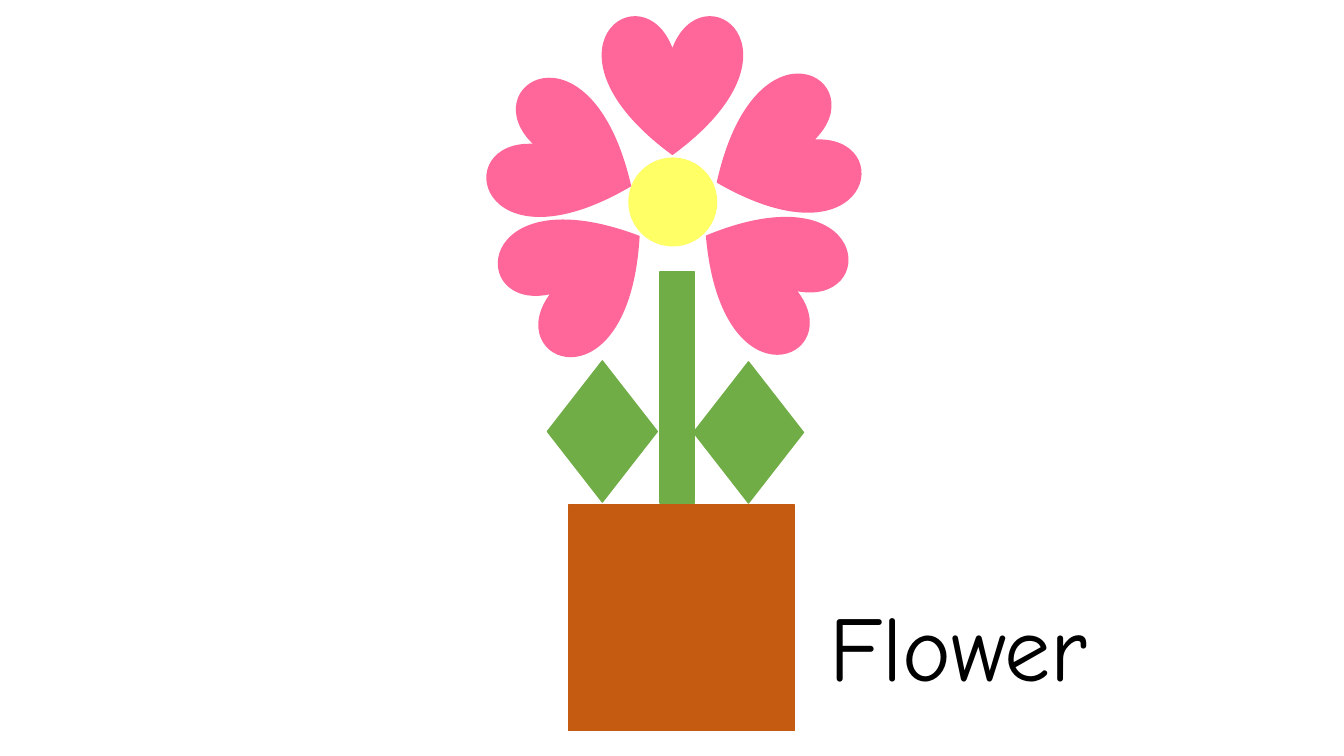
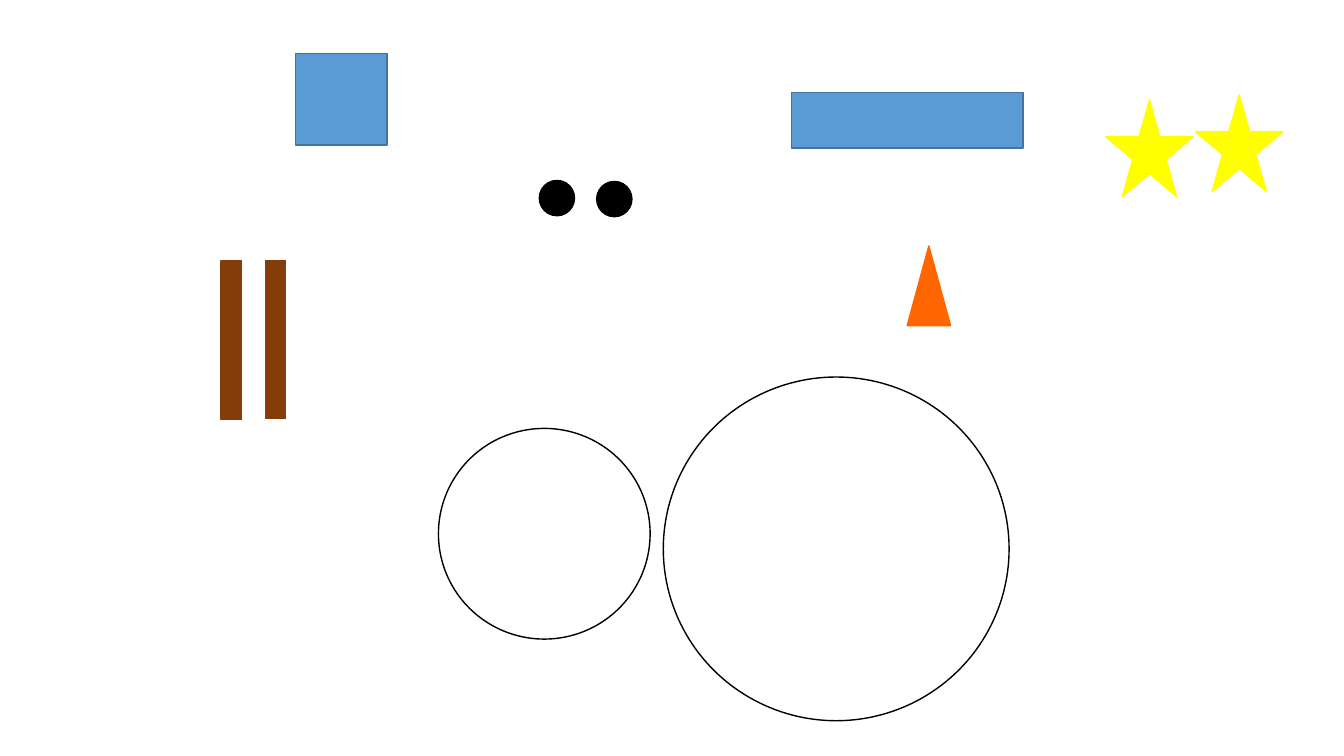
from dataclasses import dataclass

from pptx import Presentation
from pptx.dml.color import RGBColor
from pptx.enum.shapes import MSO_SHAPE
from pptx.enum.text import MSO_AUTO_SIZE
from pptx.shapes.shapetree import GroupShapes, SlideShapes
from pptx.slide import Slide
from pptx.util import Pt

OVAL = MSO_SHAPE.OVAL
HEART = MSO_SHAPE.HEART
RECTANGLE = MSO_SHAPE.RECTANGLE
DIAMOND = MSO_SHAPE.DIAMOND
STAR = MSO_SHAPE.STAR_5_POINT
TRIANGLE = MSO_SHAPE.ISOSCELES_TRIANGLE
GROW_TO_TEXT = MSO_AUTO_SIZE.SHAPE_TO_FIT_TEXT

BLACK = RGBColor(0x00, 0x00, 0x00)
WHITE = RGBColor(0xFF, 0xFF, 0xFF)
PINK = RGBColor(0xFF, 0x66, 0x99)
PALE_YELLOW = RGBColor(0xFF, 0xFF, 0x66)
YELLOW = RGBColor(0xFF, 0xFF, 0x00)
GREEN = RGBColor(0x70, 0xAD, 0x47)
TERRACOTTA = RGBColor(0xC5, 0x5A, 0x11)
BLUE = RGBColor(0x5B, 0x9B, 0xD5)
DARK_BLUE = RGBColor(0x43, 0x73, 0x9E)
ORANGE = RGBColor(0xFF, 0x66, 0x00)
BROWN = RGBColor(0x84, 0x3C, 0x0B)

FONT = "Comic Neue"
SLIDE_WIDTH, SLIDE_HEIGHT = 960, 540
BLANK_LAYOUT = 6
LINE_WIDTH = 1


@dataclass(frozen=True)
class Look:
    """A preset shape with its size and colours; the outline defaults to the fill."""
    preset: MSO_SHAPE
    width: float
    height: float
    fill: RGBColor
    outline: RGBColor | None = None


@dataclass(frozen=True)
class Piece:
    look: Look
    left: float
    top: float
    rotation: float = 0


PETAL = Look(HEART, 99.4, 99.4, PINK)
LEAF = Look(DIAMOND, 78.5, 100.8, GREEN)
FLOWER_CENTRE = Look(OVAL, 62.6, 62.6, PALE_YELLOW)
STEM = Look(RECTANGLE, 24.5, 164.9, GREEN)
POT = Look(RECTANGLE, 161.3, 161.3, TERRACOTTA)

FLOWER = [
    Piece(FLOWER_CENTRE, 449.3, 113),
    Piece(PETAL, 365, 146.2, 237),
    Piece(STEM, 471.6, 194.4),
    Piece(LEAF, 495.4, 258.5),
    Piece(PETAL, 497.5, 144.7, 121.3),
    Piece(PETAL, 355, 63.4, 293.3),
    Piece(PETAL, 508.3, 60.5, 66.3),
    Piece(PETAL, 430.6, 10.8),
    Piece(LEAF, 391, 257.8),
    Piece(POT, 406.1, 360.7),
]

BODY = Look(OVAL, 247, 245.5, WHITE, BLACK)
HEAD = Look(OVAL, 151.2, 150.5, WHITE, BLACK)
EYE = Look(OVAL, 25.2, 25.2, BLACK)
HAT_CROWN = Look(RECTANGLE, 65.5, 65.5, BLUE, DARK_BLUE)
HAT_BRIM = Look(RECTANGLE, 165.6, 39.6, BLUE, DARK_BLUE)
STAR_BUTTON = Look(STAR, 62.6, 69.1, YELLOW)
NOSE = Look(TRIANGLE, 31, 56.9, ORANGE)
ARM = Look(RECTANGLE, 113, 14.4, BROWN)

SNOWMAN_PARTS = [
    Piece(BODY, 473.8, 269.3),
    Piece(HEAD, 313.2, 306),
    Piece(EYE, 385.2, 128.9),
    Piece(EYE, 426.2, 129.6),
    Piece(HAT_CROWN, 211, 38.2),
    Piece(HAT_BRIM, 565.2, 66.2),
    Piece(STAR_BUTTON, 853.9, 67.7),
    Piece(STAR_BUTTON, 789.8, 71.3),
    Piece(NOSE, 648, 175.7),
    Piece(ARM, 140.4, 235.4, 270),
    Piece(ARM, 108.7, 235.8, 270),
]


def draw_pieces(shapes: SlideShapes | GroupShapes, pieces: list[Piece]) -> None:
    for piece in pieces:
        look = piece.look
        shape = shapes.add_shape(look.preset, Pt(piece.left), Pt(piece.top),
                                 Pt(look.width), Pt(look.height))
        shape.rotation = piece.rotation
        shape.shadow.inherit = False
        shape.fill.solid()
        shape.fill.fore_color.rgb = look.fill
        shape.line.color.rgb = look.outline or look.fill
        shape.line.width = Pt(LINE_WIDTH)


def add_caption(page: Slide, text: str) -> None:
    box = page.shapes.add_textbox(Pt(585.4), Pt(417.6), Pt(240.5), Pt(87.1))
    frame = box.text_frame
    frame.word_wrap = True
    frame.auto_size = GROW_TO_TEXT
    span = frame.paragraphs[0].add_run()
    span.text = text
    span.font.name = FONT
    span.font.size = Pt(66)
    span.font.color.rgb = BLACK


def main() -> None:
    deck = Presentation()
    deck.slide_width, deck.slide_height = Pt(SLIDE_WIDTH), Pt(SLIDE_HEIGHT)
    blank = deck.slide_layouts[BLANK_LAYOUT]

    flower_page = deck.slides.add_slide(blank)
    draw_pieces(flower_page.shapes.add_group_shape().shapes, FLOWER)
    add_caption(flower_page, "Flower")

    parts_page = deck.slides.add_slide(blank)
    draw_pieces(parts_page.shapes, SNOWMAN_PARTS)

    deck.save("out.pptx")


if __name__ == "__main__":
    main()
